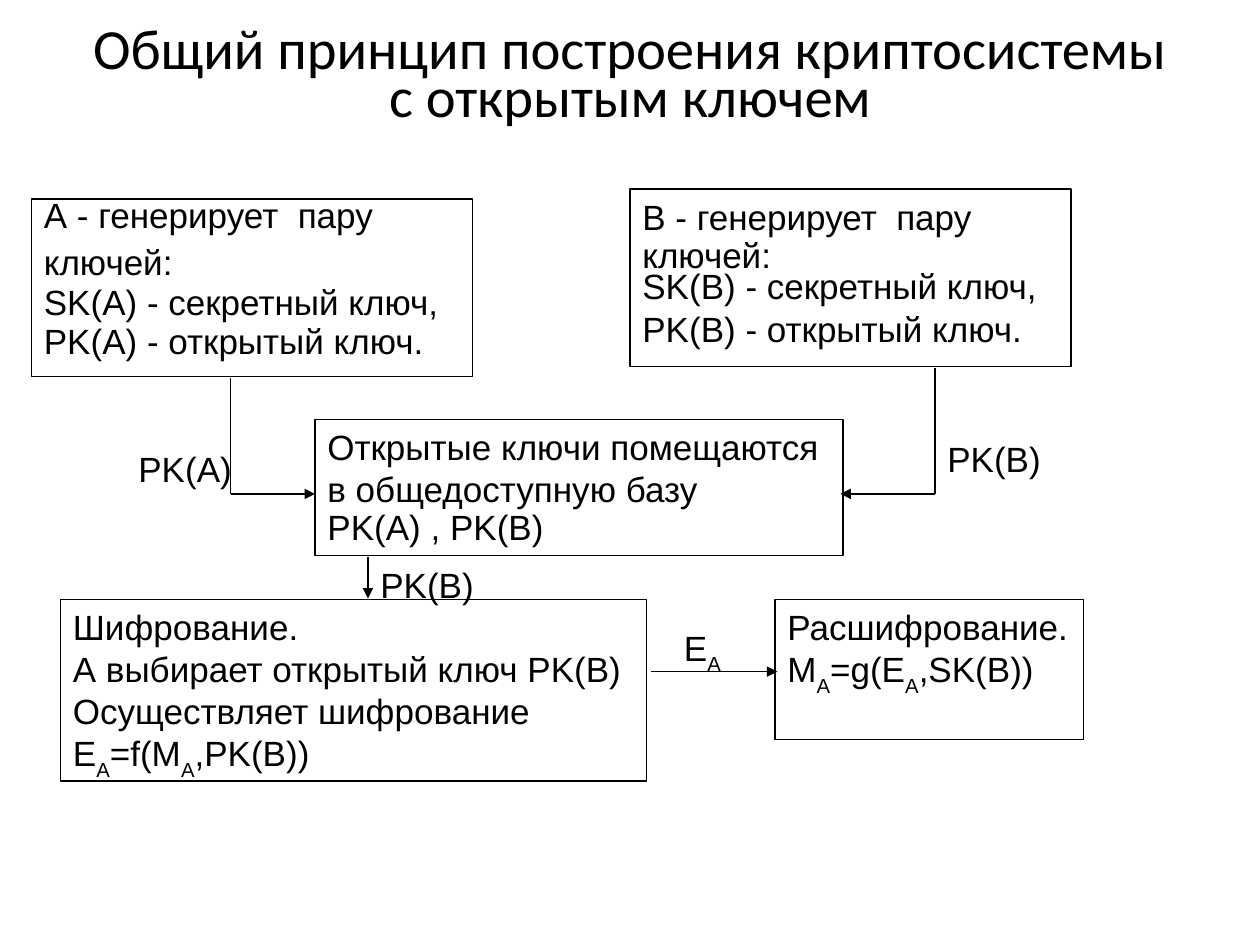
"""Build a slide on the general principle of a public-key cryptosystem."""
from lxml.etree import SubElement
from pptx import Presentation
from pptx.dml.color import RGBColor
from pptx.enum.shapes import MSO_CONNECTOR as Connector, MSO_SHAPE as Shape
from pptx.enum.text import MSO_ANCHOR as Anchor, MSO_AUTO_SIZE as AutoSize, PP_ALIGN as Align
from pptx.oxml.ns import qn
from pptx.util import Inches, Pt


def color(hex_string):
    """Return the colour for a hex string."""
    return RGBColor.from_string(hex_string)


def write(frame, lines, wrap):
    """Fill a frame with (text, line spacing, space before %) lines; odd "|" parts are subscripts."""
    frame.word_wrap = wrap
    frame.auto_size = AutoSize.SHAPE_TO_FIT_TEXT
    frame.vertical_anchor = Anchor.TOP
    for index, (text, spacing, before) in enumerate(lines):
        para = frame.paragraphs[0] if index == 0 else frame.add_paragraph()
        para.alignment = Align.LEFT
        para.line_spacing = spacing
        space = SubElement(para._p.get_or_add_pPr(), qn("a:spcBef"))
        SubElement(space, qn("a:spcPct")).set("val", str(before * 1000))
        para.font.name = "Arial"
        para.font.size = Pt(20)
        para.font.color.rgb = color("000000")
        for position, part in enumerate(text.split("|")):
            span = para.add_run()
            span.text = part
            if position % 2:
                span._r.get_or_add_rPr().set("baseline", "-30000")


deck = Presentation()
deck.slide_width, deck.slide_height = Inches(10), Inches(7.5)
slide = deck.slides.add_slide(deck.slide_layouts[5])

title = slide.shapes.title
title.left, title.top = Inches(0.5), Inches(0.17)
title.width, title.height = Inches(9), Inches(0.92)
title.text_frame.text = "Общий принцип построения криптосиcтемы с открытым ключем"
title.text_frame.vertical_anchor = Anchor.MIDDLE
title.text_frame.auto_size = AutoSize.NONE
heading = title.text_frame.paragraphs[0]
heading.alignment = Align.CENTER
heading.line_spacing = 0.7
heading.font.name = "Calibri"
heading.font.size = Pt(32.4)
heading.font.color.rgb = color("000000")

boxes = [
    (0.25, 1.58, 3.5, 1.41, True, [
        ("А - генерирует  пару", 0.7, 50),
        ("ключей:", 0.7, 50),
        ("SK(A) - секретный ключ,", 0.5, 50),
        ("PK(A) - открытый ключ.", 0.5, 50)]),
    (5, 1.5, 3.5, 1.41, True, [
        ("B - генерирует  пару", 1.0, 50),
        ("ключей:", 0.4, 50),
        ("SK(B) - секретный ключ,", 0.3, 50),
        ("PK(B) - открытый ключ.", 0.7, 50)]),
    (2.5, 3.33, 4.19, 1.08, False, [
        ("Открытые ключи помещаются", 1.0, 0),
        ("в общедоступную базу", 1.0, 0),
        ("PK(A) , PK(B)", 0.4, 50)]),
    (0.48, 4.76, 4.65, 1.44, False, [
        ("Шифрование.", 1.0, 0),
        ("А выбирает открытый ключ PK(B)", 1.0, 0),
        ("Осуществляет шифрование", 1.0, 0),
        ("E|A|=f(M|A|,PK(B))", 1.0, 0)]),
    (6.15, 4.76, 2.45, 1.11, False, [
        ("Расшифрование.", 1.0, 0),
        ("M|A|=g(E|A|,SK(B))", 1.0, 0)]),
]
for left, top, width, height, wrap, lines in boxes:
    box = slide.shapes.add_shape(
        Shape.RECTANGLE, Inches(left), Inches(top), Inches(width), Inches(height))
    box.shadow.inherit = False
    box.fill.background()
    box.line.color.rgb = color("000000")
    box.line.width = Pt(0.75)
    write(box.text_frame, lines, wrap)

connectors = [
    (1.83, 3.92, 2.5, 3.92, True),
    (1.83, 3.92, 1.83, 3, False),
    (7.42, 3.92, 6.67, 3.92, True),
    (7.42, 3.92, 7.42, 2.92, False),
    (2.92, 4.42, 2.92, 4.75, True),
    (5.17, 5.33, 6.17, 5.33, True),
]
for start_x, start_y, end_x, end_y, has_arrow in connectors:
    connector = slide.shapes.add_connector(
        Connector.STRAIGHT, Inches(start_x), Inches(start_y), Inches(end_x), Inches(end_y))
    connector.line.color.rgb = color("000000")
    connector.line.width = Pt(0.75)
    if has_arrow:
        SubElement(connector.line._get_or_add_ln(), qn("a:tailEnd")).set("type", "triangle")
    SubElement(connector._element.spPr, qn("a:effectLst"))

labels = [
    (5.33, 4.92, 0.51, "E|A"),
    (1, 3.5, 0.94, "PK(A)"),
    (7.42, 3.42, 0.94, "PK(B)"),
    (2.92, 4.42, 0.94, "PK(B)"),
]
for left, top, width, text in labels:
    label = slide.shapes.add_textbox(Inches(left), Inches(top), Inches(width), Inches(0.43))
    write(label.text_frame, [(text, 1.0, 0)], False)

deck.save("out.pptx")
